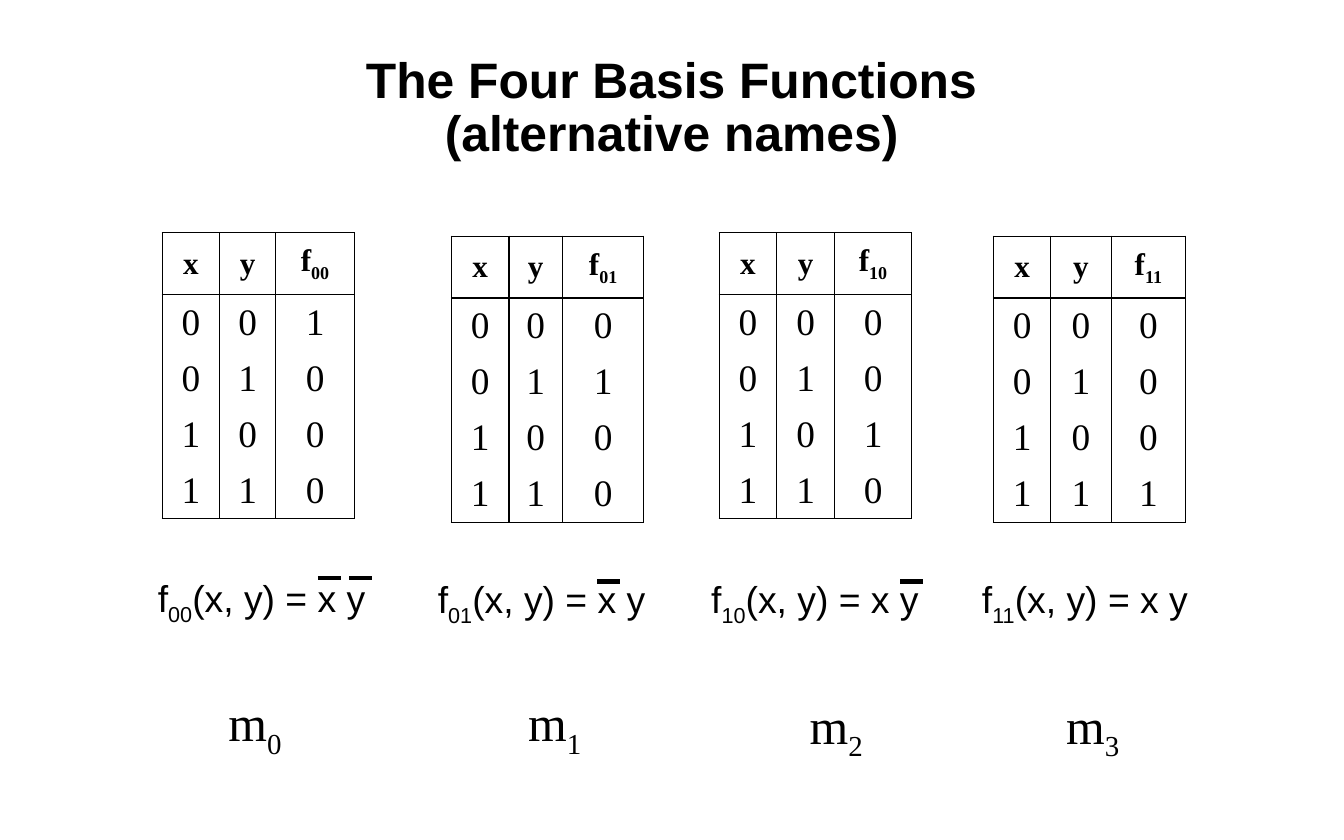
from dataclasses import dataclass

from lxml.etree import SubElement
from pptx import Presentation
from pptx.dml.color import RGBColor
from pptx.enum.shapes import MSO_CONNECTOR
from pptx.enum.text import MSO_ANCHOR, MSO_AUTO_SIZE, PP_ALIGN
from pptx.oxml import parse_xml
from pptx.oxml.ns import nsdecls, qn
from pptx.shapes.shapetree import _BaseShapes
from pptx.slide import Slide
from pptx.text.text import TextFrame, _Paragraph
from pptx.util import Cm, Pt

COLORS = {"ink": "000000", "paper": "FFFFFF"}
SANS, SERIF = "Arial", "Times New Roman"
INPUTS = ["00", "01", "10", "11"]
TABLE_WIDTH, X_WIDTH = 4.36, 1.3
HEADER_HEIGHT, ROW_HEIGHT = 1.4, 1.27
BAR_LENGTH = 0.52


@dataclass
class BasisFunction:
    index: int
    table_left: float
    table_top: float
    y_width: float
    formula_left: float
    formula_top: float
    minterm_left: float
    minterm_top: float
    bar_lefts: tuple[float, ...] = ()
    bar_top: float = 13.18

    @property
    def code(self) -> str:
        return INPUTS[self.index]


FUNCTIONS = [
    BasisFunction(0, 3.68, 5.28, 1.27, 3.33, 12.93, 4.93, 15.57, (7.21, 7.92), 13.11),
    BasisFunction(1, 10.24, 5.36, 1.22, 9.68, 12.95, 11.73, 15.57, (13.54,)),
    BasisFunction(2, 16.31, 5.28, 1.32, 15.88, 12.95, 18.11, 15.62, (20.42,)),
    BasisFunction(3, 22.53, 5.36, 1.37, 22.02, 12.95, 23.93, 15.62),
]


def write(paragraph: _Paragraph, name: str, subscript: str, rest: str,
          font_name: str, size: int, bold: bool = False) -> None:
    for text in (name, subscript, rest):
        if text:
            span = paragraph.add_run()
            span.text = text
            if text is subscript:
                span._r.get_or_add_rPr().set("baseline", "-25000")
    font = paragraph.font
    font.name, font.size, font.bold = font_name, Pt(size), bold
    font.color.rgb = RGBColor.from_string(COLORS["ink"])


def write_heading(frame: TextFrame, text: str) -> None:
    frame.word_wrap = True
    frame.vertical_anchor = MSO_ANCHOR.MIDDLE
    paragraph = frame.paragraphs[0]
    paragraph.alignment = PP_ALIGN.CENTER
    write(paragraph, text, "", "", SANS, 32, True)


def add_headings(page: Slide) -> None:
    title = page.shapes.title
    title.left, title.top, title.width, title.height = Cm(0), Cm(0.84), Cm(30.48), Cm(1.9)
    write_heading(title.text_frame, "The Four Basis Functions")
    box = page.shapes.add_textbox(Cm(2.54), Cm(2.03), Cm(25.4), Cm(1.9))
    write_heading(box.text_frame, "(alternative names)")


def set_borders(cell, visible: set[str]) -> None:
    properties = cell._tc.get_or_add_tcPr()
    for position, side in enumerate("LRTB"):
        border = parse_xml(f'<a:ln{side} {nsdecls("a")} w="12700"/>')
        if side in visible:
            fill = SubElement(border, qn("a:solidFill"))
            SubElement(fill, qn("a:srgbClr")).set("val", COLORS["ink"])
        else:
            SubElement(border, qn("a:noFill"))
        properties.insert(position, border)


def add_truth_table(page: Slide, function: BasisFunction) -> None:
    rows = [("x", "y", "f")]
    rows += [(*code, str(int(code == function.code))) for code in INPUTS]
    table = page.shapes.add_table(
        len(rows), 3, Cm(function.table_left), Cm(function.table_top),
        Cm(TABLE_WIDTH), Cm(HEADER_HEIGHT + 4 * ROW_HEIGHT)).table
    table.first_row = table.horz_banding = False
    widths = (X_WIDTH, function.y_width, TABLE_WIDTH - X_WIDTH - function.y_width)
    for column, width in zip(table.columns, widths):
        column.width = Cm(width)
    for row, values in enumerate(rows):
        header = row == 0
        table.rows[row].height = Cm(HEADER_HEIGHT if header else ROW_HEIGHT)
        borders = {"L", "R"}
        if row <= 1:
            borders.add("T")
        if row in (0, len(rows) - 1):
            borders.add("B")
        for column, value in enumerate(values):
            cell = table.cell(row, column)
            cell.fill.background()
            cell.vertical_anchor = MSO_ANCHOR.MIDDLE
            set_borders(cell, borders)
            paragraph = cell.text_frame.paragraphs[0]
            paragraph.alignment = PP_ALIGN.CENTER
            paragraph.space_before = Pt(6 if header else 12)
            subscript = function.code if value == "f" else ""
            write(paragraph, value, subscript, "", SERIF, 20 if header else 24, header)


def add_label(shapes: _BaseShapes, left: float, top: float, width: float, height: float,
              name: str, subscript: str, rest: str, font_name: str, size: int) -> None:
    box = shapes.add_textbox(Cm(left), Cm(top), Cm(width), Cm(height))
    box.text_frame.word_wrap = False
    box.text_frame.auto_size = MSO_AUTO_SIZE.SHAPE_TO_FIT_TEXT
    write(box.text_frame.paragraphs[0], name, subscript, rest, font_name, size)


def add_negation_bar(shapes: _BaseShapes, left: float, top: float) -> None:
    bar = shapes.add_connector(
        MSO_CONNECTOR.STRAIGHT, Cm(left), Cm(top), Cm(left + BAR_LENGTH), Cm(top))
    bar.line.color.rgb = RGBColor.from_string(COLORS["ink"])
    bar.line.width = Pt(3)
    SubElement(bar._element.spPr, qn("a:effectLst"))


def add_formula(page: Slide, function: BasisFunction) -> None:
    shapes = page.shapes.add_group_shape().shapes if function.bar_lefts else page.shapes
    add_label(shapes, function.formula_left, function.formula_top, 5.33, 1.29,
              "f", function.code, "(x, y) = x y", SANS, 24)
    for left in function.bar_lefts:
        add_negation_bar(shapes, left, function.bar_top)


def main() -> None:
    deck = Presentation()
    deck.slide_width, deck.slide_height = Cm(30.48), Cm(19.05)
    page = deck.slides.add_slide(deck.slide_layouts[5])
    page.background.fill.solid()
    page.background.fill.fore_color.rgb = RGBColor.from_string(COLORS["paper"])
    add_headings(page)
    for function in FUNCTIONS:
        add_truth_table(page, function)
        add_formula(page, function)
        add_label(page.shapes, function.minterm_left, function.minterm_top, 1.78, 1.63,
                  "m", str(function.index), "", SERIF, 32)
    deck.save("out.pptx")


if __name__ == "__main__":
    main()
